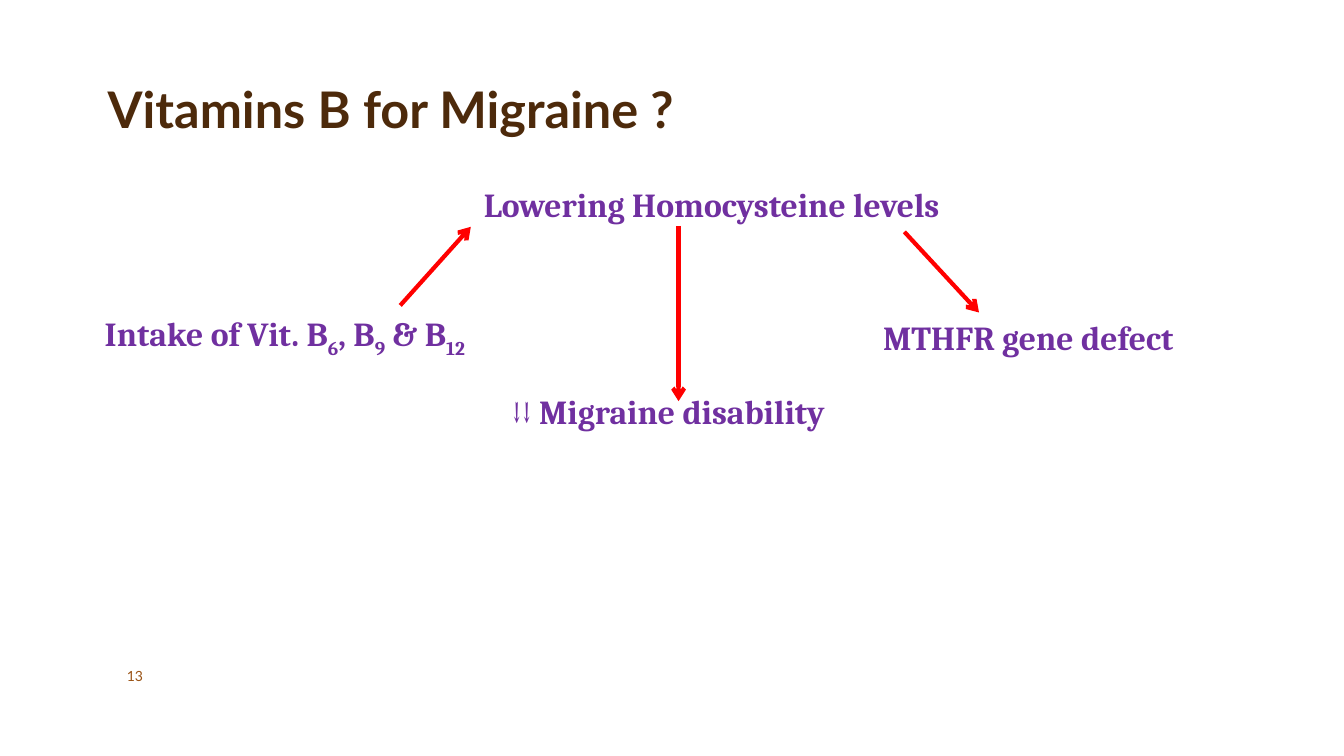
from dataclasses import dataclass

from lxml.etree import SubElement
from pptx import Presentation
from pptx.dml.color import RGBColor
from pptx.enum.shapes import MSO_CONNECTOR
from pptx.enum.text import MSO_ANCHOR, PP_ALIGN
from pptx.oxml.ns import qn
from pptx.slide import Slide
from pptx.text.text import _Paragraph
from pptx.util import Emu, Pt

BROWN = RGBColor(0x4D, 0x2A, 0x0B)
RUST = RGBColor(0x9A, 0x53, 0x15)
PURPLE = RGBColor(0x70, 0x30, 0xA0)
RED = RGBColor(0xFF, 0x00, 0x00)


def px(n: int) -> Emu:
    return Emu(n * 9144)


@dataclass(frozen=True)
class Label:
    x: int
    y: int
    w: int
    h: int
    texts: tuple[str, ...]
    size: int = 24
    font: str = "Cambria"
    color: RGBColor = PURPLE
    bold: bool = True
    align: PP_ALIGN = PP_ALIGN.JUSTIFY
    anchor: MSO_ANCHOR = MSO_ANCHOR.TOP


@dataclass(frozen=True)
class Arrow:
    x1: int
    y1: int
    x2: int
    y2: int


LABELS = (
    Label(97, 74, 1100, 68, ("Vitamins B for Migraine ?",), 36, "Lato", BROWN,
          align=PP_ALIGN.LEFT, anchor=MSO_ANCHOR.BOTTOM),
    Label(470, 178, 486, 60, ("Lowering Homocysteine levels",)),
    Label(866, 309, 325, 60, ("MTHFR gene defect",)),
    Label(94, 306, 425, 60, ("Intake of Vit. B", "6", ", B", "9", " & B", "12")),
    Label(498, 383, 366, 60, ("↓↓ Migraine disability",)),
    Label(116, 658, 83, 25, ("13",), 10, "Lato", RUST, False,
          PP_ALIGN.LEFT, MSO_ANCHOR.MIDDLE),
)

ARROWS = (
    Arrow(897, 230, 971, 310),
    Arrow(397, 303, 467, 225),
    Arrow(673, 224, 673, 398),
)


def add_runs(p: _Paragraph, texts: tuple[str, ...]) -> None:
    for i, text in enumerate(texts):
        r = p.add_run()
        r.text = text
        if i % 2:
            r._r.get_or_add_rPr().set("baseline", "-25000")


def add_label(s: Slide, label: Label) -> None:
    sp = s.shapes.add_textbox(px(label.x), px(label.y), px(label.w), px(label.h))
    tf = sp.text_frame
    tf.word_wrap = True
    tf.vertical_anchor = label.anchor
    p = tf.paragraphs[0]
    p.alignment = label.align
    add_runs(p, label.texts)
    p.font.size = Pt(label.size)
    p.font.name = label.font
    p.font.bold = label.bold
    p.font.color.rgb = label.color


def add_arrow(s: Slide, arrow: Arrow) -> None:
    sp = s.shapes.add_connector(MSO_CONNECTOR.STRAIGHT, px(arrow.x1), px(arrow.y1),
                                px(arrow.x2), px(arrow.y2))
    sp.line.color.rgb = RED
    sp.line.width = Pt(3)
    SubElement(sp.line._get_or_add_ln(), qn("a:tailEnd"), type="arrow")
    SubElement(sp._element.spPr, qn("a:effectLst"))


def main() -> None:
    prs = Presentation()
    prs.slide_width, prs.slide_height = px(1333), px(750)
    s = prs.slides.add_slide(prs.slide_layouts[6])
    for label in LABELS:
        add_label(s, label)
    for arrow in ARROWS:
        add_arrow(s, arrow)
    prs.save("out.pptx")


if __name__ == "__main__":
    main()
